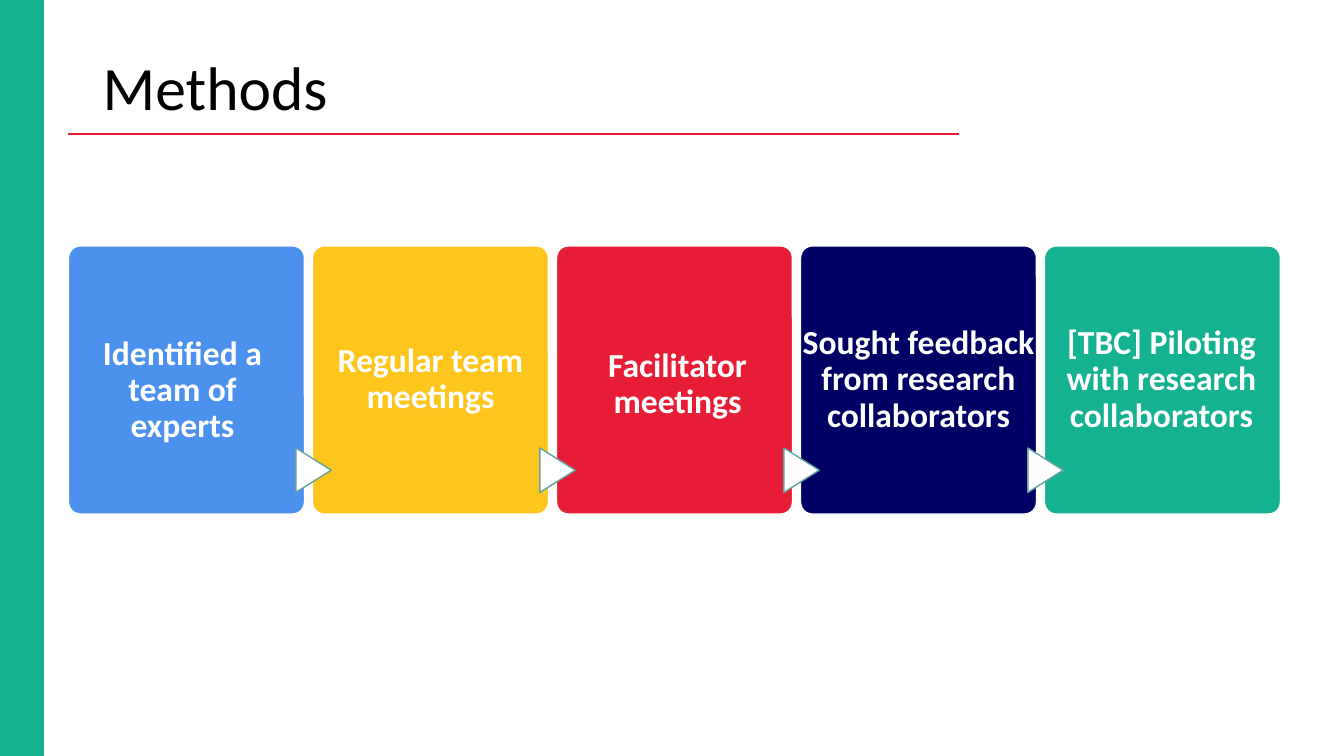
from dataclasses import dataclass

from pptx import Presentation
from pptx.dml.color import RGBColor
from pptx.enum import shapes, text
from pptx.oxml.ns import qn
from pptx.util import Inches, Pt
from lxml import etree


@dataclass(frozen=True)
class Theme:
    font: str = "Calibri"
    head: int = 44
    body: int = 24
    black: str = "000000"
    white: str = "FFFFFF"
    green: str = "15B292"
    red: str = "E71D36"
    blue: str = "4B91ED"
    gold: str = "FEC51D"
    navy: str = "000064"
    teal: str = "62A39F"


THEME = Theme()
PITCH = 2.42
STEPS = [
    ("Identified a team of experts", THEME.blue, 0.74, 3.28, 2.14, 1.19, 0.1),
    ("Regular team meetings", THEME.gold, 3.2, 3.35, 2.14, 0.83, 0.1),
    ("Facilitator meetings", THEME.red, 5.65, 3.4, 2.14, 0.83, 0.1),
    ("Sought feedback from research collaborators", THEME.navy,
     7.94, 2.99, 2.34, 1.56, 0),
    ("[TBC] Piloting with research collaborators", THEME.green,
     10.45, 2.99, 2.14, 1.56, 0.1),
]


def color(code):
    return RGBColor.from_string(code)


def add_block(slide, kind, left, top, width, height, fill, line):
    block = slide.shapes.add_shape(
        kind, Inches(left), Inches(top), Inches(width), Inches(height))
    block.shadow.inherit = False
    block.fill.solid()
    block.fill.fore_color.rgb = color(fill)
    block.line.color.rgb = color(line)
    block.line.width = Pt(1)
    return block


def add_label(slide, words, left, top, width, height, size, tint,
              bold=False, align=text.PP_ALIGN.LEFT, inset=0.1):
    box = slide.shapes.add_textbox(
        Inches(left), Inches(top), Inches(width), Inches(height))
    frame = box.text_frame
    frame.word_wrap = True
    frame.vertical_anchor = text.MSO_ANCHOR.MIDDLE
    frame.margin_left = frame.margin_right = Inches(inset)
    frame.text = words
    para = frame.paragraphs[0]
    para.alignment = align
    para.line_spacing = 0.9
    font = para.runs[0].font
    font.name = THEME.font
    font.size = Pt(size)
    font.bold = bold
    font.color.rgb = color(tint)


def add_rule(slide, left, right, top):
    rule = slide.shapes.add_connector(
        shapes.MSO_CONNECTOR.STRAIGHT,
        Inches(left), Inches(top), Inches(right), Inches(top))
    rule.line.color.rgb = color(THEME.red)
    rule.line.width = Pt(1.5)
    etree.SubElement(rule.element.spPr, qn("a:effectLst"))


def add_card(slide, index, fill):
    card = add_block(slide, shapes.MSO_SHAPE.ROUNDED_RECTANGLE,
                     0.68 + index * PITCH, 2.44, 2.34, 2.66,
                     fill, THEME.white)
    card.adjustments[0] = 0.05


def add_arrow(slide, index):
    arrow = add_block(slide, shapes.MSO_SHAPE.FLOWCHART_EXTRACT,
                      2.89 + index * PITCH, 4.49, 0.44, 0.35,
                      THEME.white, THEME.teal)
    arrow.rotation = 90


def main():
    deck = Presentation()
    deck.slide_width = Inches(13.33)
    deck.slide_height = Inches(7.5)
    slide = deck.slides.add_slide(deck.slide_layouts[6])

    add_block(slide, shapes.MSO_SHAPE.RECTANGLE, 0, 0, 0.43, 7.5,
              THEME.green, THEME.green)
    add_rule(slide, 0.67, 9.51, 1.33)
    add_label(slide, "Methods", 0.92, 0.47, 11.5, 0.86,
              THEME.head, THEME.black)

    for index, (words, fill, left, top, width, height, inset) in enumerate(STEPS):
        add_card(slide, index, fill)
        add_label(slide, words, left, top, width, height, THEME.body,
                  THEME.white, True, text.PP_ALIGN.CENTER, inset)
    for index in range(len(STEPS) - 1):
        add_arrow(slide, index)

    deck.save("out.pptx")


if __name__ == "__main__":
    main()
